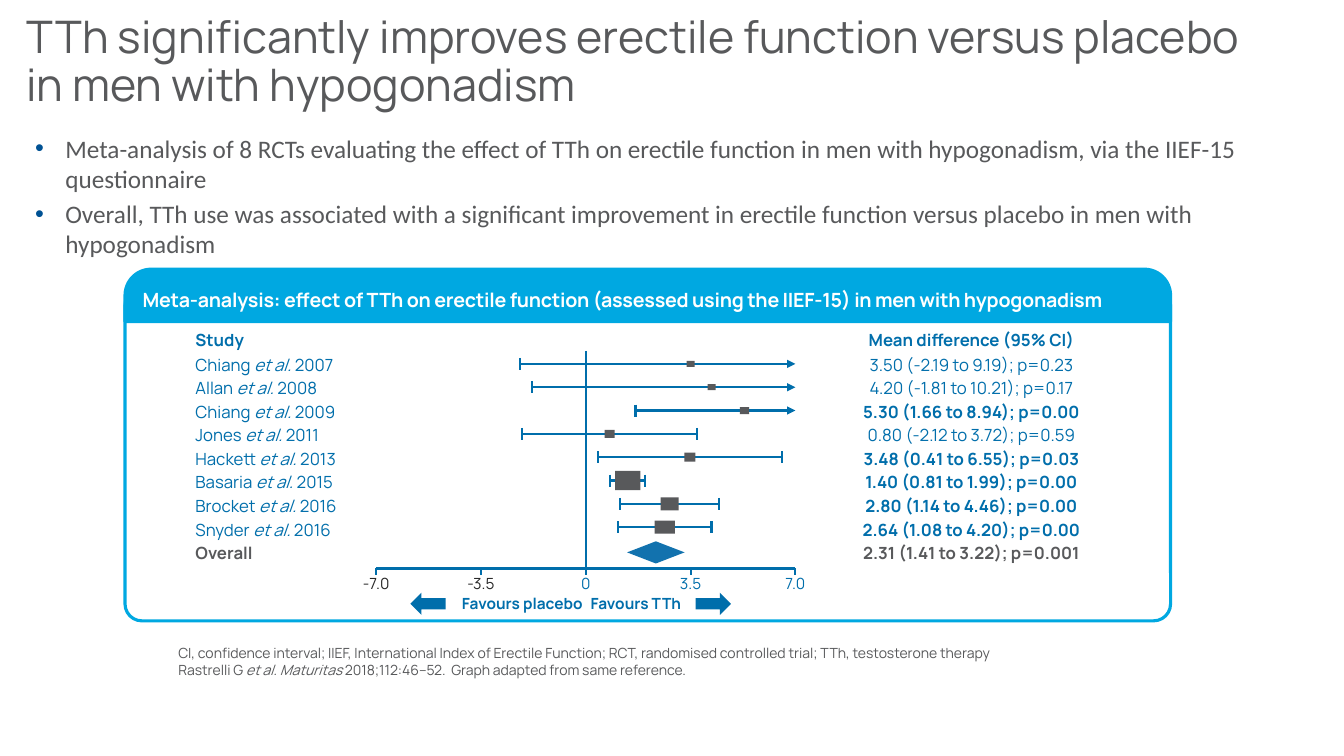
from lxml import etree
from pptx import Presentation
from pptx.dml.color import RGBColor
from pptx.enum.shapes import MSO_CONNECTOR, MSO_SHAPE as Preset
from pptx.enum.text import MSO_ANCHOR as Anchor, MSO_AUTO_SIZE as AutoSize, PP_ALIGN as Align
from pptx.oxml.ns import qn
from pptx.util import Inches, Pt

# Content
COLOURS = {"grey": "58595B", "blue": "006EAB", "cyan": "00A8E1", "white": "FFFFFF",
           "diamond": "1272AE", "bullet": "005294", "dark": "272727"}
TITLE = "TTh significantly improves erectile function versus placebo in men with hypogonadism"
BULLETS = [
    "Meta-analysis of 8 RCTs evaluating the effect of TTh on erectile function in men with "
    "hypogonadism, via the IIEF-15 questionnaire",
    "Overall, TTh use was associated with a significant improvement in erectile function "
    "versus placebo in men with hypogonadism",
]
PANEL_TITLE = ("Meta-analysis: effect of TTh on erectile function (assessed using the IIEF-15) "
               "in men with hypogonadism")
# author, year, mean, lower, upper, p value, marker width, marker height
STUDIES = [
    ("Chiang", 2007, 3.50, -2.19, 9.19, 0.23, 0.08, 0.06),
    ("Allan", 2008, 4.20, -1.81, 10.21, 0.17, 0.08, 0.06),
    ("Chiang", 2009, 5.30, 1.66, 8.94, 0.00, 0.09, 0.07),
    ("Jones", 2011, 0.80, -2.12, 3.72, 0.59, 0.10, 0.08),
    ("Hackett", 2013, 3.48, 0.41, 6.55, 0.03, 0.11, 0.09),
    ("Basaria", 2015, 1.40, 0.81, 1.99, 0.00, 0.25, 0.19),
    ("Brocket", 2016, 2.80, 1.14, 4.46, 0.00, 0.18, 0.13),
    ("Snyder", 2016, 2.64, 1.08, 4.20, 0.00, 0.20, 0.13),
]
OVERALL = "2.31 (1.41 to 3.22); p=0.001"
# value, label, colour
TICKS = [(-7, "-7.0", "dark"), (-3.5, "-3.5", "dark"), (0, "0", "blue"),
         (3.5, "3.5", "blue"), (7, "7.0", "blue")]
FOOTNOTES = [
    [("CI, confidence interval; IIEF, International Index of Erectile Function; "
      "RCT, randomised controlled trial; TTh, testosterone therapy", False)],
    [("Rastrelli G ", False), ("et al. Maturitas", True),
     (" 2018;112:46–52.  Graph adapted from same reference.", False)],
]

# Plot geometry in inches
ZERO_X, UNIT, AXIS_MAX = 5.81, 0.297, 7
ROW_TOP, ROW_STEP, CAP = 3.61, 0.2315, 0.06
AXIS_Y, TICK_END = 5.64, 5.70

presentation = Presentation()
presentation.slide_width, presentation.slide_height = Inches(13.33), Inches(7.5)
slide = presentation.slides.add_slide(presentation.slide_layouts[5])


def plot_x(value):
    return ZERO_X + value * UNIT


def colour(name):
    return RGBColor.from_string(COLOURS[name])


def add_run(paragraph, text, size, colour_name, bold=False, italic=False, font="Manrope"):
    run = paragraph.add_run()
    run.text = text
    run.font.name, run.font.size = font, Pt(size)
    run.font.bold, run.font.italic = bold, italic
    run.font.color.rgb = colour(colour_name)
    return run


def add_text_box(left, top, width, height, anchor=Anchor.TOP):
    frame = slide.shapes.add_textbox(*map(Inches, (left, top, width, height))).text_frame
    frame.word_wrap, frame.vertical_anchor = True, anchor
    return frame


def add_label(box, text, size, colour_name, align, bold=False, anchor=Anchor.TOP):
    paragraph = add_text_box(*box, anchor).paragraphs[0]
    paragraph.alignment = align
    add_run(paragraph, text, size, colour_name, bold)


def next_paragraph(frame, index):
    return frame.add_paragraph() if index else frame.paragraphs[0]


def row_paragraph(frame, index, align):
    paragraph = next_paragraph(frame, index)
    paragraph.alignment = align
    paragraph.line_spacing, paragraph.space_after = 1.03, Pt(2)
    return paragraph


def add_shape(preset, left, top, width, height, fill=None, line=None):
    shape = slide.shapes.add_shape(preset, *map(Inches, (left, top, width, height)))
    shape.shadow.inherit = False
    if fill:
        shape.fill.solid()
        shape.fill.fore_color.rgb = colour(fill)
    else:
        shape.fill.background()
    if line:
        shape.line.color.rgb, shape.line.width = colour(line), Pt(2.25)
    else:
        shape.line.fill.background()
    return shape


def add_line(x1, y1, x2, y2, arrow=False):
    line = slide.shapes.add_connector(MSO_CONNECTOR.STRAIGHT, *map(Inches, (x1, y1, x2, y2)))
    line.line.color.rgb, line.line.width = colour("blue"), Pt(1.5)
    if arrow:
        etree.SubElement(line.line._get_or_add_ln(), qn("a:tailEnd"), type="triangle")
    etree.SubElement(line._element.spPr, qn("a:effectLst"))


# Title
title = slide.shapes.title
title.left, title.top, title.width, title.height = map(Inches, (0.16, 0.17, 12.44, 0.91))
title.text_frame.word_wrap, title.text_frame.auto_size = True, AutoSize.NONE
title.text_frame.vertical_anchor = Anchor.MIDDLE
paragraph = title.text_frame.paragraphs[0]
paragraph.alignment, paragraph.line_spacing = Align.LEFT, 0.9
add_run(paragraph, TITLE, 32, "grey")

# Bullets
frame = add_text_box(0.25, 1.27, 12.34, 1.36)
for index, text in enumerate(BULLETS):
    paragraph = next_paragraph(frame, index)
    if index:
        paragraph.space_before = Pt(3.6)
    properties = paragraph._p.get_or_add_pPr()
    properties.set("marL", str(Inches(0.3)))
    properties.set("indent", str(Inches(-0.3)))
    bullet_colour = etree.SubElement(properties, qn("a:buClr"))
    etree.SubElement(bullet_colour, qn("a:srgbClr"), val=COLOURS["bullet"])
    etree.SubElement(properties, qn("a:buFont"), typeface="Arial")
    etree.SubElement(properties, qn("a:buChar"), char="•")
    add_run(paragraph, text, 18, "grey", font="Calibri")

# Panel and its heading
panel = add_shape(Preset.ROUNDED_RECTANGLE, 1.24, 2.86, 10.37, 3.3, line="cyan")
panel.adjustments[0] = 0.051
heading = add_shape(Preset.ROUND_2_SAME_RECTANGLE, 1.24, 2.67, 10.37, 0.52, "cyan", "cyan")
heading.adjustments[0], heading.adjustments[1] = 0.5, 0
heading.text_frame.word_wrap, heading.text_frame.vertical_anchor = True, Anchor.MIDDLE
paragraph = heading.text_frame.paragraphs[0]
paragraph.alignment = Align.LEFT
run = add_run(paragraph, PANEL_TITLE, 14, "white", bold=True)
run.font._element.set("spc", "-20")

# Study and result columns
add_label((1.84, 3.22, 0.83, 0.3), "Study", 12, "blue", Align.LEFT, True)
add_label((8.21, 3.22, 2.85, 0.3), "Mean difference (95% CI)", 12, "blue", Align.CENTER, True)
names = add_text_box(1.84, 3.46, 2.12, 2.19)
results = add_text_box(8.19, 3.46, 2.89, 2.43)
for row, (author, year, mean, low, high, p_value, *_) in enumerate(STUDIES):
    paragraph = row_paragraph(names, row, Align.LEFT)
    for text, italic in ((f"{author} ", False), ("et al. ", True), (str(year), False)):
        add_run(paragraph, text, 12, "blue", italic=italic)
    add_run(row_paragraph(results, row, Align.CENTER),
            f"{mean:.2f} ({low:.2f} to {high:.2f}); p={p_value:.2f}",
            12, "blue", bold=p_value < 0.05)
add_run(row_paragraph(names, len(STUDIES), Align.LEFT), "Overall", 12, "grey", True)
add_run(row_paragraph(results, len(STUDIES), Align.CENTER), OVERALL, 12, "grey", True)

# Axis
add_line(plot_x(-AXIS_MAX), AXIS_Y, plot_x(AXIS_MAX), AXIS_Y)
for value, text, colour_name in TICKS:
    x = plot_x(value)
    add_line(x, AXIS_Y if value else 3.48, x, TICK_END)
    add_label((x - 0.3, AXIS_Y, 0.6, 0.29), text, 11, colour_name, Align.CENTER,
              anchor=Anchor.MIDDLE)

# Confidence intervals and markers
for row, (_, _, mean, low, high, _, width, height) in enumerate(STUDIES):
    y = ROW_TOP + row * ROW_STEP
    clipped = high > AXIS_MAX
    end = plot_x(min(high, AXIS_MAX))
    add_line(plot_x(low), y, end, y, arrow=clipped)
    for x in [plot_x(low)] if clipped else [plot_x(low), end]:
        add_line(x, y - CAP, x, y + CAP)
    add_shape(Preset.RECTANGLE, plot_x(mean) - width / 2, y - height / 2, width, height, "grey")
add_shape(Preset.DIAMOND, 6.22, 5.37, 0.57, 0.22, "diamond")

# Direction labels
add_label((4.05, 5.84, 1.83, 0.29), "Favours placebo", 11, "blue", Align.RIGHT, True, Anchor.MIDDLE)
add_label((5.76, 5.84, 1.36, 0.29), "Favours TTh", 11, "blue", Align.LEFT, True, Anchor.MIDDLE)
add_shape(Preset.LEFT_ARROW, 4.07, 5.88, 0.35, 0.22, "blue")
add_shape(Preset.RIGHT_ARROW, 6.9, 5.88, 0.35, 0.22, "blue")

# Footnotes
frame = add_text_box(1.67, 6.34, 10, 0.44, Anchor.BOTTOM)
for index, parts in enumerate(FOOTNOTES):
    paragraph = next_paragraph(frame, index)
    for text, italic in parts:
        add_run(paragraph, text, 10, "grey", italic=italic)

presentation.save("out.pptx")
